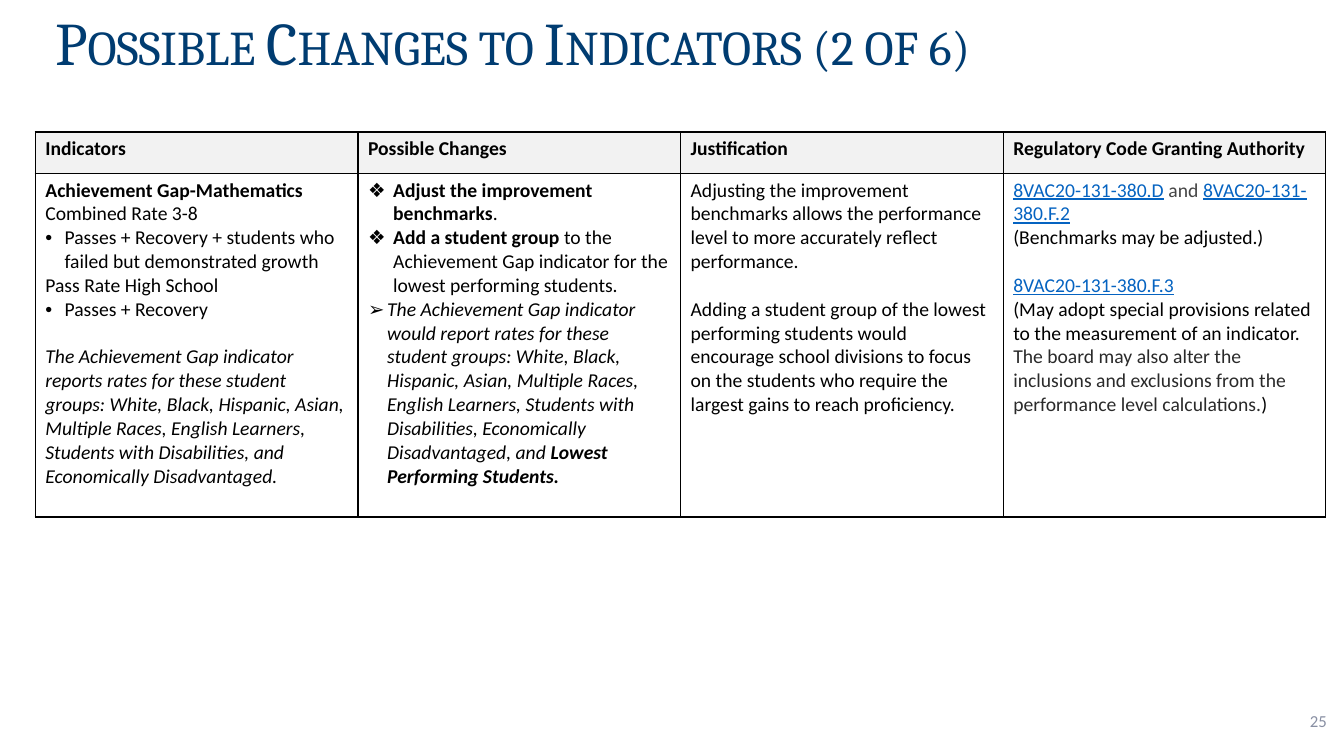
from dataclasses import dataclass

from lxml import etree
from pptx import Presentation
from pptx.dml.color import RGBColor
from pptx.enum.text import MSO_ANCHOR, MSO_AUTO_SIZE, PP_ALIGN
from pptx.oxml.ns import qn
from pptx.util import Pt

LEFT, RIGHT = PP_ALIGN.LEFT, PP_ALIGN.RIGHT
BOTTOM, MIDDLE = MSO_ANCHOR.BOTTOM, MSO_ANCHOR.MIDDLE
NO_FIT = MSO_AUTO_SIZE.NONE
EMU_PER_PX = 9144
TITLE_ONLY = 5


@dataclass(frozen=True)
class Theme:
    heading_font: str = "Cambria"
    body_font: str = "Calibri"
    title_size: float = 43.2
    body_size: float = 14
    number_size: float = 12
    gap: float = 17
    border: float = 1
    title: str = "003C71"
    text: str = "000000"
    link: str = "0563C1"
    joiner: str = "444444"
    quote: str = "2A2A2A"
    number: str = "888FA3"
    header_fill: str = "F2F2F2"


THEME = Theme()
STYLES = {
    "plain": {},
    "bold": {"bold": True},
    "italic": {"italic": True},
    "strong": {"bold": True, "italic": True},
    "link": {"underline": True, "color": THEME.link},
    "joiner": {"color": THEME.joiner},
    "quote": {"color": THEME.quote},
}
BULLET_INDENTS = {"•": 19, "❖": 25, "➢": 19}


@dataclass(frozen=True)
class Line:
    spans: tuple
    bullet: str = ""
    gap: bool = False


def line(text, style="plain", **options):
    return Line(((text, style),), **options)


HEADERS = ["Indicators", "Possible Changes", "Justification",
           "Regulatory Code Granting Authority"]
BODY = [
    [
        line("Achievement Gap-Mathematics", "bold"),
        line("Combined Rate 3-8"),
        line("Passes + Recovery + students who failed but demonstrated growth",
             bullet="•"),
        line("Pass Rate High School"),
        line("Passes + Recovery", bullet="•"),
        line("The Achievement Gap indicator reports rates for these student groups: "
             "White, Black, Hispanic, Asian, Multiple Races, English Learners, "
             "Students with Disabilities, and Economically Disadvantaged.",
             "italic", gap=True),
    ],
    [
        Line((("Adjust the improvement benchmarks", "bold"), (".", "plain")), "❖"),
        Line((("Add a student group ", "bold"),
              ("to the Achievement Gap indicator for the lowest performing students.",
               "plain")), "❖"),
        Line((("The Achievement Gap indicator would report rates for these student "
               "groups: White, Black, Hispanic, Asian, Multiple Races, English "
               "Learners, Students with Disabilities, Economically Disadvantaged, and ",
               "italic"),
              ("Lowest Performing Students.", "strong")), "➢"),
    ],
    [
        line("Adjusting the improvement benchmarks allows the performance level to "
             "more accurately reflect performance."),
        line("Adding a student group of the lowest performing students would "
             "encourage school divisions to focus on the students who require the "
             "largest gains to reach proficiency.", gap=True),
    ],
    [
        Line((("8VAC20-131-380.D", "link"), (" and ", "joiner"),
              ("8VAC20-131-380.F.2", "link"))),
        line("(Benchmarks may be adjusted.)"),
        line("8VAC20-131-380.F.3", "link", gap=True),
        Line((("(May adopt special provisions related to the measurement of "
               "an indicator. ", "plain"),
              ("The board may also alter the inclusions and exclusions from the "
               "performance level calculations.", "quote"),
              (")", "plain"))),
    ],
]


def px(length):
    return length * EMU_PER_PX


def set_values(target, values):
    for name, value in values.items():
        setattr(target, name, value)


def add_span(para, text, size=THEME.body_size, name=THEME.body_font,
             color=THEME.text, **values):
    span = para.add_run()
    span.text = text
    set_values(span.font, {"size": Pt(size), "name": name, **values})
    span.font.color.rgb = RGBColor.from_string(color)
    return span


def add_solid(parent, color):
    fill = etree.SubElement(parent, qn("a:solidFill"))
    etree.SubElement(fill, qn("a:srgbClr"), val=color)


def add_bullet(para, bullet):
    indent = px(BULLET_INDENTS[bullet])
    properties = para._p.get_or_add_pPr()
    properties.set("marL", str(indent))
    properties.set("indent", str(-indent))
    color = etree.SubElement(properties, qn("a:buClr"))
    etree.SubElement(color, qn("a:srgbClr"), val=THEME.text)
    etree.SubElement(properties, qn("a:buFont"), typeface="Arial")
    etree.SubElement(properties, qn("a:buChar"), char=bullet)


def fill_cell(cell, lines, fill=None):
    properties = cell._tc.get_or_add_tcPr()
    for side in ("a:lnL", "a:lnR", "a:lnT", "a:lnB"):
        border = etree.SubElement(properties, qn(side), w=str(Pt(THEME.border)))
        add_solid(border, THEME.text)
    if fill:
        cell.fill.solid()
        cell.fill.fore_color.rgb = RGBColor.from_string(fill)
    else:
        cell.fill.background()
    frame = cell.text_frame
    for index, item in enumerate(lines):
        para = frame.add_paragraph() if index else frame.paragraphs[0]
        if item.gap:
            para.space_before = Pt(THEME.gap)
        if item.bullet:
            add_bullet(para, item.bullet)
        for text, style in item.spans:
            add_span(para, text, **STYLES[style])


def place_title(page, box, text):
    title = page.shapes.title
    set_values(title, dict(zip(("left", "top", "width", "height"), map(px, box))))
    frame = title.text_frame
    set_values(frame, {"vertical_anchor": BOTTOM, "word_wrap": True,
                       "auto_size": NO_FIT, "margin_left": px(90),
                       "margin_right": px(10), "margin_top": px(5),
                       "margin_bottom": px(5)})
    para = frame.paragraphs[0]
    set_values(para, {"alignment": LEFT, "line_spacing": 0.9})
    span = add_span(para, text, THEME.title_size, THEME.heading_font, THEME.title)
    span.font._element.set("cap", "small")


def place_table(page, box, header_height):
    left, top, width, height = box
    frame = page.shapes.add_table(2, len(HEADERS), *map(px, box))
    table = frame.table
    set_values(table, {"first_row": False, "horz_banding": False})
    for column in table.columns:
        column.width = px(width // len(HEADERS))
    table.rows[0].height = px(header_height)
    table.rows[1].height = px(height - header_height)
    for index, (header, lines) in enumerate(zip(HEADERS, BODY)):
        fill_cell(table.cell(0, index), [line(header, "bold")], THEME.header_fill)
        fill_cell(table.cell(1, index), lines)


def place_number(page, box, text):
    frame = page.shapes.add_textbox(*map(px, box)).text_frame
    set_values(frame, {"word_wrap": True, "vertical_anchor": MIDDLE})
    para = frame.paragraphs[0]
    para.alignment = RIGHT
    add_span(para, text, THEME.number_size, color=THEME.number)


def main():
    deck = Presentation()
    set_values(deck, {"slide_width": px(1333), "slide_height": px(750)})
    page = deck.slides.add_slide(deck.slide_layouts[TITLE_ONLY])
    place_title(page, (-35, -20, 1333, 103), "Possible Changes to Indicators (2 of 6)")
    place_number(page, (1026, 695, 300, 40), "25")
    place_table(page, (35, 131, 1280, 382), 41)
    deck.save("out.pptx")


if __name__ == "__main__":
    main()
